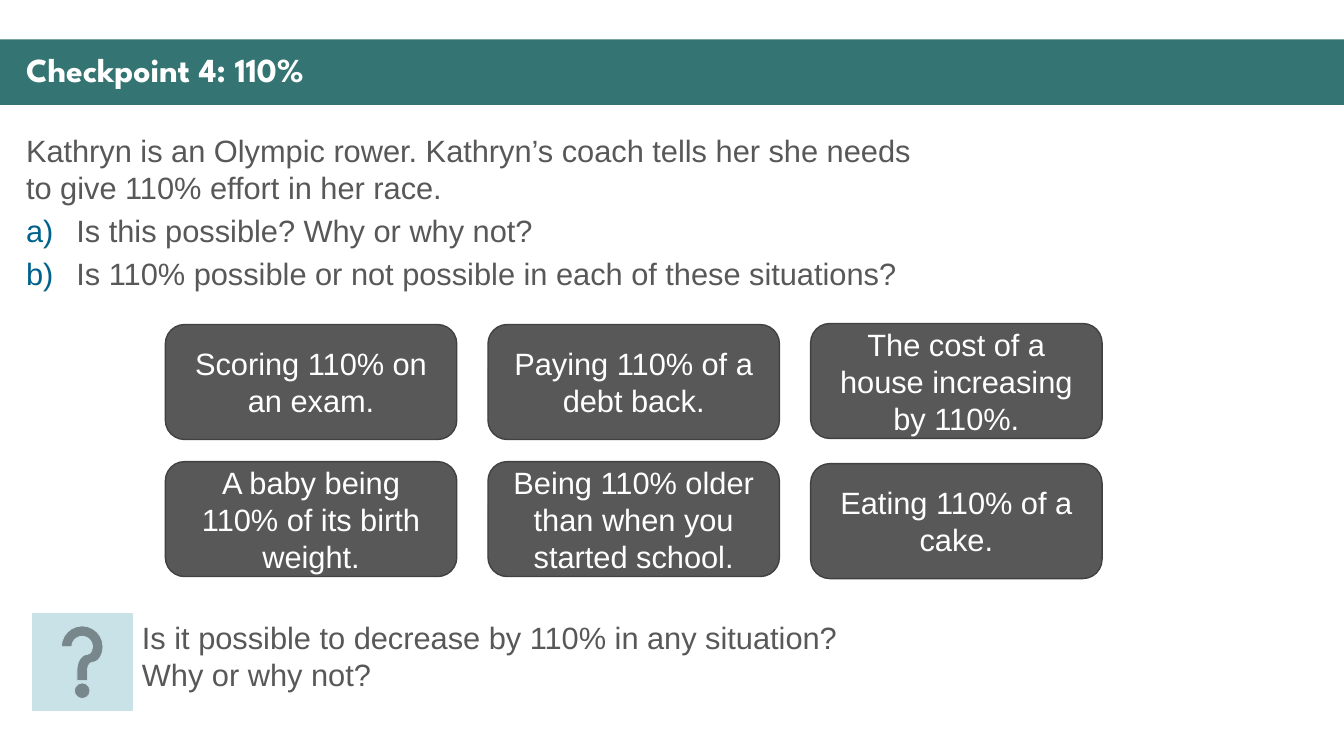
from lxml.etree import SubElement
from pptx import Presentation
from pptx.dml.color import RGBColor
from pptx.enum.shapes import MSO_SHAPE
from pptx.enum.text import MSO_ANCHOR, PP_ALIGN
from pptx.oxml.ns import qn
from pptx.util import Inches, Pt

COLORS = {
    "band": "347574", "text": "585858", "card": "585858", "edge": "414141",
    "white": "FFFFFF", "help": "C8E2E8", "letter": "00628C",
}
TITLE = "Checkpoint 4: 110%"
INTRO = ("Kathryn is an Olympic rower. Kathryn’s coach tells her she needs "
         "to give 110% effort in her race.")
PARTS = [
    "Is this possible? Why or why not?",
    "Is 110% possible or not possible in each of these situations?",
]
FURTHER = "Is it possible to decrease by 110% in any situation? Why or why not?"

CARD_LEFT, CARD_STEP = 1.64, 3.2
CARD_WIDTH, CARD_HEIGHT = 2.89, 1.14
# Each card: its words and its top in inches
CARDS = [
    [("Scoring 110% on an exam.", 3.22),
     ("Paying 110% of a debt back.", 3.22),
     ("The cost of a house increasing by 110%.", 3.21)],
    [("A baby being 110% of its birth weight.", 4.58),
     ("Being 110% older than when you started school.", 4.58),
     ("Eating 110% of a cake.", 4.6)],
]


def color(name):
    return RGBColor.from_string(COLORS[name])


def add_block(slide, kind, box, fill, edge=None, width=0.5):
    block = slide.shapes.add_shape(kind, *map(Inches, box))
    block.shadow.inherit = False
    block.fill.solid()
    block.fill.fore_color.rgb = color(fill)
    if edge:
        block.line.color.rgb = color(edge)
        block.line.width = Pt(width)
    else:
        block.line.fill.background()
    return block


def add_frame(slide, box):
    frame = slide.shapes.add_textbox(*map(Inches, box)).text_frame
    frame.word_wrap = True
    return frame


def write(para, words, shade="text", size=22, font="Arial", bold=False):
    para.space_before = Pt(size * 0.2)
    run = para.add_run()
    run.text = words
    run.font.size = Pt(size)
    run.font.name = font
    run.font.bold = bold
    run.font.color.rgb = color(shade)


def add_letter(para):
    """Number a paragraph a), b), ... with a hanging indent."""
    props = para._p.get_or_add_pPr()
    props.set("marL", str(Inches(0.5)))
    props.set("indent", str(Inches(-0.5)))
    shade = SubElement(props, qn("a:buClr"))
    SubElement(shade, qn("a:srgbClr"), val=COLORS["letter"])
    SubElement(props, qn("a:buFont"), typeface="+mj-lt")
    SubElement(props, qn("a:buAutoNum"), type="alphaLcParenR")


def add_card(slide, words, left, top):
    card = add_block(slide, MSO_SHAPE.ROUNDED_RECTANGLE,
                     (left, top, CARD_WIDTH, CARD_HEIGHT), "card", "edge", 1)
    frame = card.text_frame
    frame.word_wrap = True
    frame.vertical_anchor = MSO_ANCHOR.MIDDLE
    para = frame.paragraphs[0]
    para.alignment = PP_ALIGN.CENTER
    write(para, words, "white")


def main():
    deck = Presentation()
    deck.slide_width, deck.slide_height = Inches(13.33), Inches(7.5)
    slide = deck.slides.add_slide(deck.slide_layouts[6])

    add_block(slide, MSO_SHAPE.RECTANGLE, (0, 0.39, 13.33, 0.65), "band")
    title = add_frame(slide, (0.16, 0.48, 13.04, 0.47))
    title.vertical_anchor = MSO_ANCHOR.MIDDLE
    heading = title.paragraphs[0]
    write(heading, TITLE, "white", 24, "League Spartan", True)
    heading.line_spacing = 0.9

    add_block(slide, MSO_SHAPE.ACTION_BUTTON_HELP,
              (0.32, 6.09, 0.99, 0.96), "help", "help")

    task = add_frame(slide, (0.16, 1.26, 9.19, 1.73))
    write(task.paragraphs[0], INTRO)
    for part in PARTS:
        para = task.add_paragraph()
        write(para, part)
        add_letter(para)

    for row in CARDS:
        for col, (words, top) in enumerate(row):
            add_card(slide, words, CARD_LEFT + col * CARD_STEP, top)

    further = add_frame(slide, (1.31, 6.09, 7.24, 0.84))
    write(further.paragraphs[0], FURTHER)
    deck.save("out.pptx")


if __name__ == "__main__":
    main()
